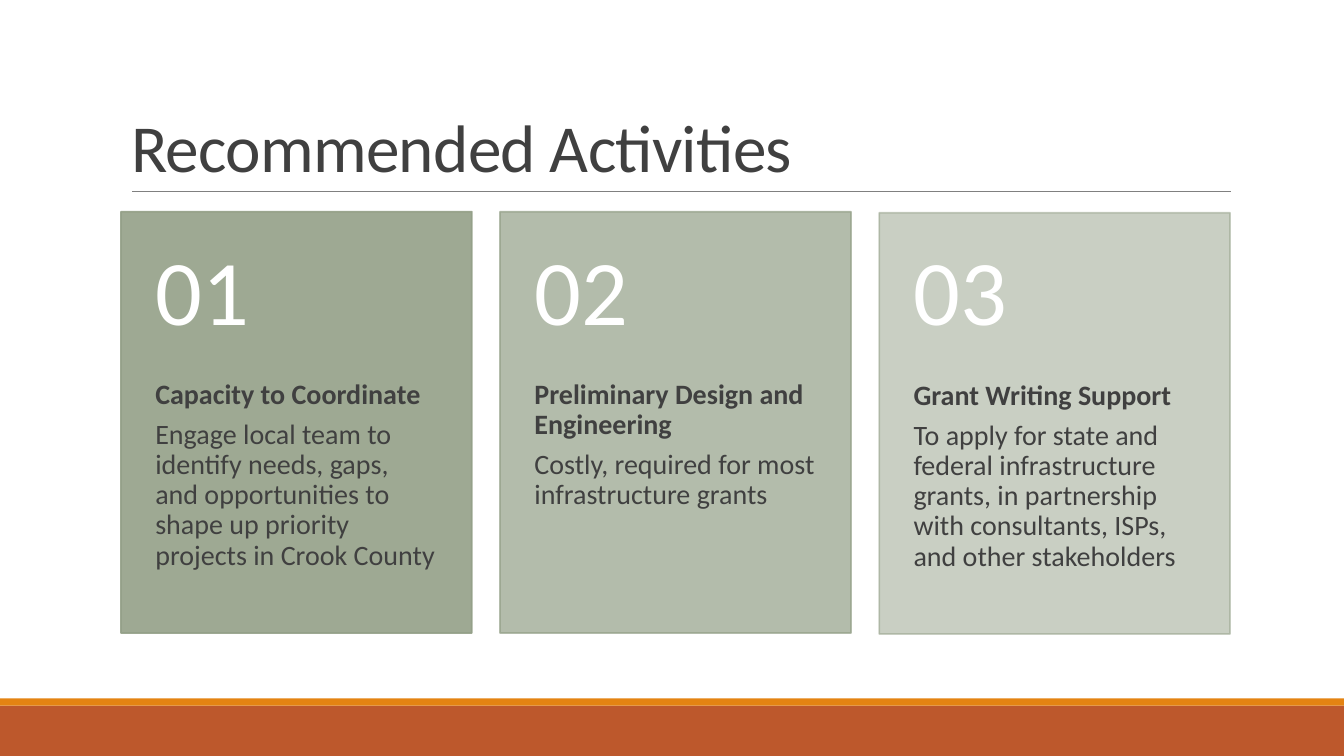
import pptx
import pptx.util
import pptx.dml.color
import pptx.enum.shapes
import pptx.enum.text
import pptx.oxml.ns
import lxml.etree

Inches = pptx.util.Inches
Pt = pptx.util.Pt
RGBColor = pptx.dml.color.RGBColor
MSO_ANCHOR = pptx.enum.text.MSO_ANCHOR
RECTANGLE = pptx.enum.shapes.MSO_SHAPE.RECTANGLE
qn = pptx.oxml.ns.qn

RUST = RGBColor(0xBD, 0x58, 0x2C)
ORANGE = RGBColor(0xE4, 0x83, 0x12)
SAGE = RGBColor(0x94, 0xA0, 0x88)
GRAY = RGBColor(0x80, 0x80, 0x80)
DARK = RGBColor(0x40, 0x40, 0x40)
WHITE = RGBColor(0xFF, 0xFF, 0xFF)


def write(frame, lines, size, color, anchor=MSO_ANCHOR.TOP, insets=(0.1, 0.05, 0.1, 0.05),
          spacing=0.9, after=0, bold_first=False, tracking=0):
    frame.word_wrap = True
    frame.auto_size = pptx.enum.text.MSO_AUTO_SIZE.NONE
    frame.vertical_anchor = anchor
    frame.margin_left, frame.margin_top, frame.margin_right, frame.margin_bottom = map(Inches, insets)
    for index, line in enumerate(lines):
        paragraph = frame.paragraphs[0] if index == 0 else frame.add_paragraph()
        paragraph.alignment = pptx.enum.text.PP_ALIGN.LEFT
        paragraph.line_spacing = spacing
        paragraph.space_after = Pt(after)
        run = paragraph.add_run()
        run.text = line
        run.font.name = "Calibri"
        run.font.size = Pt(size)
        run.font.color.rgb = color
        run.font.bold = bold_first and index == 0
        if tracking:
            run.font._element.set("spc", str(tracking))


presentation = pptx.Presentation()
presentation.slide_width = Inches(13.33)
presentation.slide_height = Inches(7.5)
slide = presentation.slides.add_slide(presentation.slide_layouts[5])
shapes = slide.shapes

for top, height, color in [(7, 0.5, RUST), (6.93, 0.07, ORANGE)]:
    band = shapes.add_shape(RECTANGLE, 0, Inches(top), Inches(13.33), Inches(height))
    band.shadow.inherit = False
    band.fill.solid()
    band.fill.fore_color.rgb = color
    band.line.fill.background()

title_rule = shapes.add_connector(pptx.enum.shapes.MSO_CONNECTOR.STRAIGHT,
                                  Inches(1.31), Inches(1.9), Inches(12.21), Inches(1.9))
title_rule.line.color.rgb = GRAY
title_rule.line.width = Pt(0.5)
lxml.etree.SubElement(title_rule._element.spPr, qn("a:effectLst"))

title = shapes.title
title.left, title.top, title.width, title.height = map(Inches, (1.2, 0.31, 11, 1.59))
write(title.text_frame, ["Recommended Activities"], 48, DARK,
      anchor=MSO_ANCHOR.BOTTOM, spacing=0.85, tracking=-50)

activities = [
    ("Capacity to Coordinate",
     "Engage local team to identify needs, gaps, and opportunities to shape up priority projects in Crook County",
     90, 2.1),
    ("Preliminary Design and Engineering",
     "Costly, required for most infrastructure grants",
     70, 2.1),
    ("Grant Writing Support",
     "To apply for state and federal infrastructure grants, in partnership with consultants, ISPs, "
     "and other stakeholders",
     50, 2.11),
]
card_width = Inches(3.48)
for index, (heading, detail, opacity, top) in enumerate(activities):
    left = Inches(1.2 + 3.76 * index)
    card = shapes.add_shape(RECTANGLE, left, Inches(top), card_width, Inches(4.18))
    card.shadow.inherit = False
    card.fill.solid()
    card.fill.fore_color.rgb = SAGE
    card.line.color.rgb = SAGE
    card.line.width = Pt(1.25)
    for tint in card._element.spPr.iter(qn("a:srgbClr")):
        lxml.etree.SubElement(tint, qn("a:alpha")).set("val", str(opacity * 1000))

    description = shapes.add_textbox(left, Inches(top + 1.67), card_width, Inches(2.51))
    write(description.text_frame, [heading, detail], 20, DARK,
          insets=(0.34, 0, 0.34, 0.36), after=7, bold_first=True)

    number = shapes.add_textbox(left, Inches(2.1), card_width, Inches(1.67))
    write(number.text_frame, [f"{index + 1:02}"], 66, WHITE, anchor=MSO_ANCHOR.MIDDLE,
          insets=(0.34, 0.18, 0.34, 0.18), after=23)

presentation.save("out.pptx")
